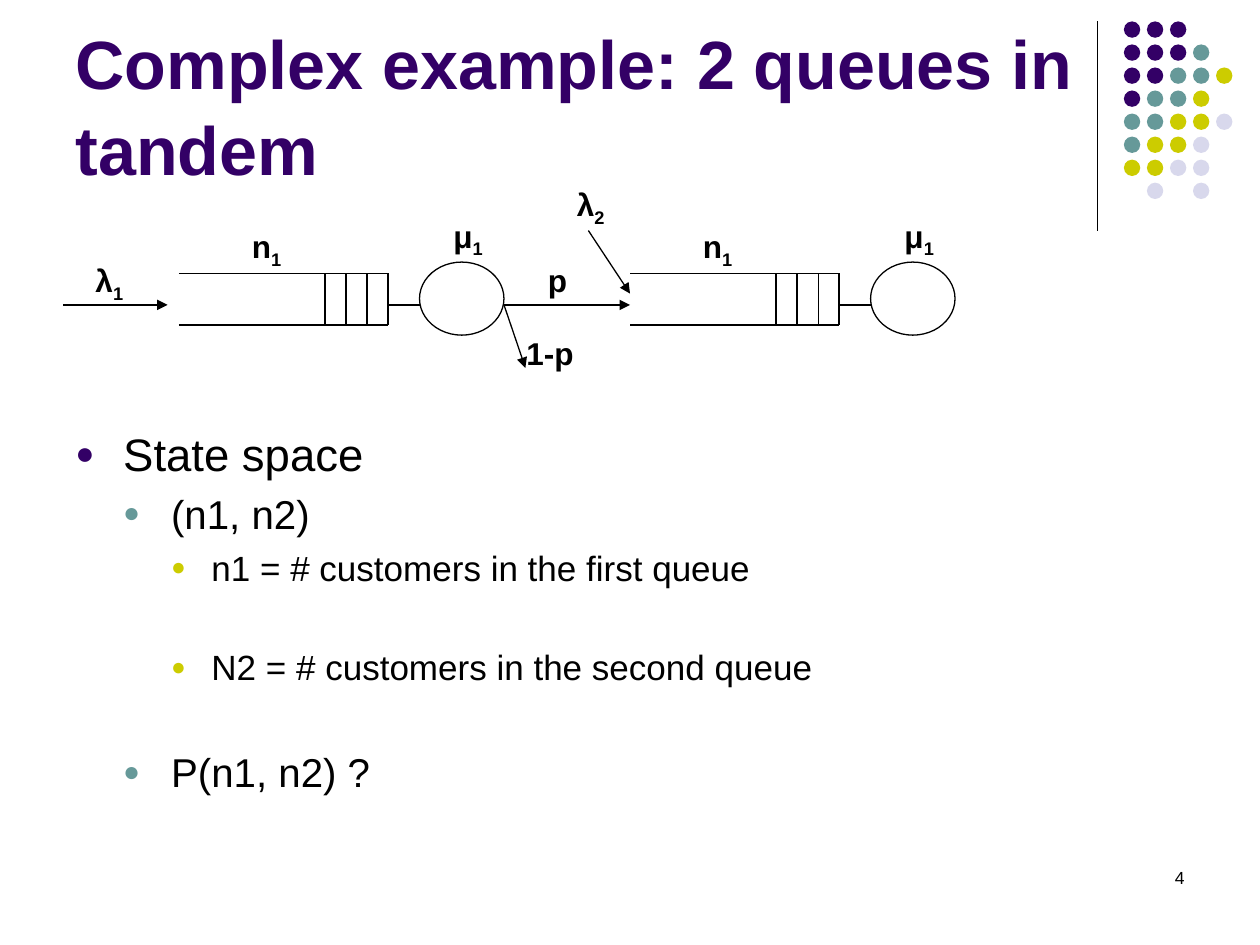
from dataclasses import dataclass

import pptx
import pptx.dml.color
import pptx.enum.shapes
import pptx.enum.text
import pptx.oxml.ns
import pptx.util
from lxml import etree

Inches, Pt = pptx.util.Inches, pptx.util.Pt
RGBColor = pptx.dml.color.RGBColor
MSO_SHAPE = pptx.enum.shapes.MSO_SHAPE
PP_ALIGN = pptx.enum.text.PP_ALIGN
qn = pptx.oxml.ns.qn

BLACK = RGBColor(0x00, 0x00, 0x00)
PURPLE = RGBColor(0x33, 0x00, 0x66)
TEAL = RGBColor(0x66, 0x99, 0x99)
OLIVE = RGBColor(0xCC, 0xCC, 0x00)
LAVENDER = RGBColor(0xD8, 0xD8, 0xEC)

DOT_COLORS = {"P": PURPLE, "T": TEAL, "O": OLIVE, "L": LAVENDER}
DOT_ROWS = ["PPP", "PPPT", "PPTTO", "PTTO", "TTOOL", "TOOL", "OOLL", " L L"]
DOT_PITCH = 1.28 / 7
FLOW_Y = 2.42


@dataclass
class Label:
    left: float
    top: float
    width: float
    text: str
    sub: str = ""


@dataclass
class Arrow:
    x1: float
    y1: float
    x2: float
    y2: float


@dataclass
class Level:
    margin: float
    hanging: float
    size: int
    bullet: RGBColor


@dataclass
class Item:
    text: str
    level: int
    before: int


LEVELS = [
    Level(0.38, 0.38, 26, PURPLE),
    Level(0.76, 0.38, 23, TEAL),
    Level(1.08, 0.32, 20, OLIVE),
]
ITEMS = [
    Item("State space", 0, 5),
    Item("(n1, n2)", 1, 5),
    Item("n1 = # customers in the first queue", 2, 5),
    Item("N2 = # customers in the second queue", 2, 33),
    Item("P(n1, n2) ?", 1, 34),
]
QUEUE_LEFTS = [1.42, 5.0]
ARROWS = [
    Arrow(0.5, FLOW_Y, 1.33, FLOW_Y),
    Arrow(4, FLOW_Y, 5, FLOW_Y),
    Arrow(4.67, 1.83, 5, 2.33),
    Arrow(4, FLOW_Y, 4.17, 2.92),
]
LABELS = [
    Label(0.66, 2.02, 0.43, "λ", "1"),
    Label(4.48, 1.42, 0.43, "λ", "2"),
    Label(4.25, 2.02, 0.35, "p"),
    Label(4.08, 2.6, 0.58, "1-p"),
]


def add_line(s, x1: float, y1: float, x2: float, y2: float, arrow: bool = False) -> None:
    c = s.shapes.add_connector(pptx.enum.shapes.MSO_CONNECTOR.STRAIGHT,
                               Inches(x1), Inches(y1), Inches(x2), Inches(y2))
    c.line.color.rgb = BLACK
    c.line.width = Pt(0.75)
    if arrow:
        etree.SubElement(c.line._get_or_add_ln(), qn("a:tailEnd"), type="triangle")
    etree.SubElement(c._element.spPr, qn("a:effectLst"))


def add_ellipse(s, left: float, top: float, width: float, height: float, fill=None) -> None:
    sp = s.shapes.add_shape(MSO_SHAPE.OVAL, Inches(left), Inches(top),
                            Inches(width), Inches(height))
    sp.shadow.inherit = False
    if fill is None:
        sp.fill.background()
        sp.line.color.rgb = BLACK
        sp.line.width = Pt(0.75)
    else:
        sp.fill.solid()
        sp.fill.fore_color.rgb = fill
        sp.line.fill.background()


def add_box(s, left: float, top: float, width: float, height: float, wrap: bool = True):
    tf = s.shapes.add_textbox(Inches(left), Inches(top), Inches(width), Inches(height)).text_frame
    tf.word_wrap = wrap
    return tf


def add_run(p, text: str, size: int, color: RGBColor = BLACK, bold: bool = False):
    r = p.add_run()
    r.text = text
    for name, value in {"name": "Arial", "size": Pt(size), "bold": bold}.items():
        setattr(r.font, name, value)
    r.font.color.rgb = color
    return r


def add_label(s, label: Label) -> None:
    tf = add_box(s, label.left, label.top, label.width, 0.4, wrap=False)
    tf.auto_size = pptx.enum.text.MSO_AUTO_SIZE.SHAPE_TO_FIT_TEXT
    add_run(tf.paragraphs[0], label.text, 18, bold=True)
    if label.sub:
        r = add_run(tf.paragraphs[0], label.sub, 18, bold=True)
        r.font._element.set("baseline", "-25000")


def add_queue(s, left: float) -> None:
    top, bottom, right = 2.17, 2.58, left + 1.66
    for y in (top, bottom):
        add_line(s, left, y, right, y)
    for i in range(4):
        x = right - i * 0.5 / 3
        add_line(s, x, top, x, bottom)
    add_line(s, right, FLOW_Y, right + 0.25, FLOW_Y)
    add_ellipse(s, right + 0.25, 2.08, 0.67, 0.58)
    add_label(s, Label(left + 0.48, 1.75, 0.45, "n", "1"))
    add_label(s, Label(left + 2.08, 1.67, 0.45, "μ", "1"))


def add_item(p, item: Item) -> None:
    level = LEVELS[item.level]
    p.level = item.level
    p.space_before = Pt(item.before)
    pPr = p._p.get_or_add_pPr()
    pPr.set("marL", str(Inches(level.margin)))
    pPr.set("indent", str(-Inches(level.hanging)))
    color = etree.SubElement(pPr, qn("a:buClr"))
    etree.SubElement(color, qn("a:srgbClr"), val=str(level.bullet))
    etree.SubElement(pPr, qn("a:buSzPct"), val="70000")
    etree.SubElement(pPr, qn("a:buFont"), typeface="Arial")
    etree.SubElement(pPr, qn("a:buChar"), char="●")
    add_run(p, item.text, level.size)


def main() -> None:
    prs = pptx.Presentation()
    prs.slide_width, prs.slide_height = Inches(10), Inches(7.5)
    s = prs.slides.add_slide(prs.slide_layouts[6])

    # Corner decoration
    add_line(s, 8.71, 0.17, 8.71, 1.83)
    for row, codes in enumerate(DOT_ROWS):
        for col, code in enumerate(codes):
            if code in DOT_COLORS:
                add_ellipse(s, 8.92 + col * DOT_PITCH, 0.17 + row * DOT_PITCH,
                            0.13, 0.13, DOT_COLORS[code])

    # Title and slide number
    tf = add_box(s, 0.5, 0.13, 8.25, 1.42)
    tf.vertical_anchor = pptx.enum.text.MSO_ANCHOR.BOTTOM
    tf.paragraphs[0].line_spacing = 1.05
    add_run(tf.paragraphs[0], "Complex example: 2 queues in tandem", 39, PURPLE, bold=True)
    p = add_box(s, 7.17, 6.83, 2.33, 0.5).paragraphs[0]
    p.alignment = PP_ALIGN.RIGHT
    add_run(p, "4", 10)

    # State space outline
    tf = add_box(s, 0.5, 3.33, 9, 3.37)
    for i, item in enumerate(ITEMS):
        add_item(tf.add_paragraph() if i else tf.paragraphs[0], item)

    # Tandem queue diagram
    for left in QUEUE_LEFTS:
        add_queue(s, left)
    for a in ARROWS:
        add_line(s, a.x1, a.y1, a.x2, a.y2, arrow=True)
    for label in LABELS:
        add_label(s, label)

    prs.save("out.pptx")


if __name__ == "__main__":
    main()
